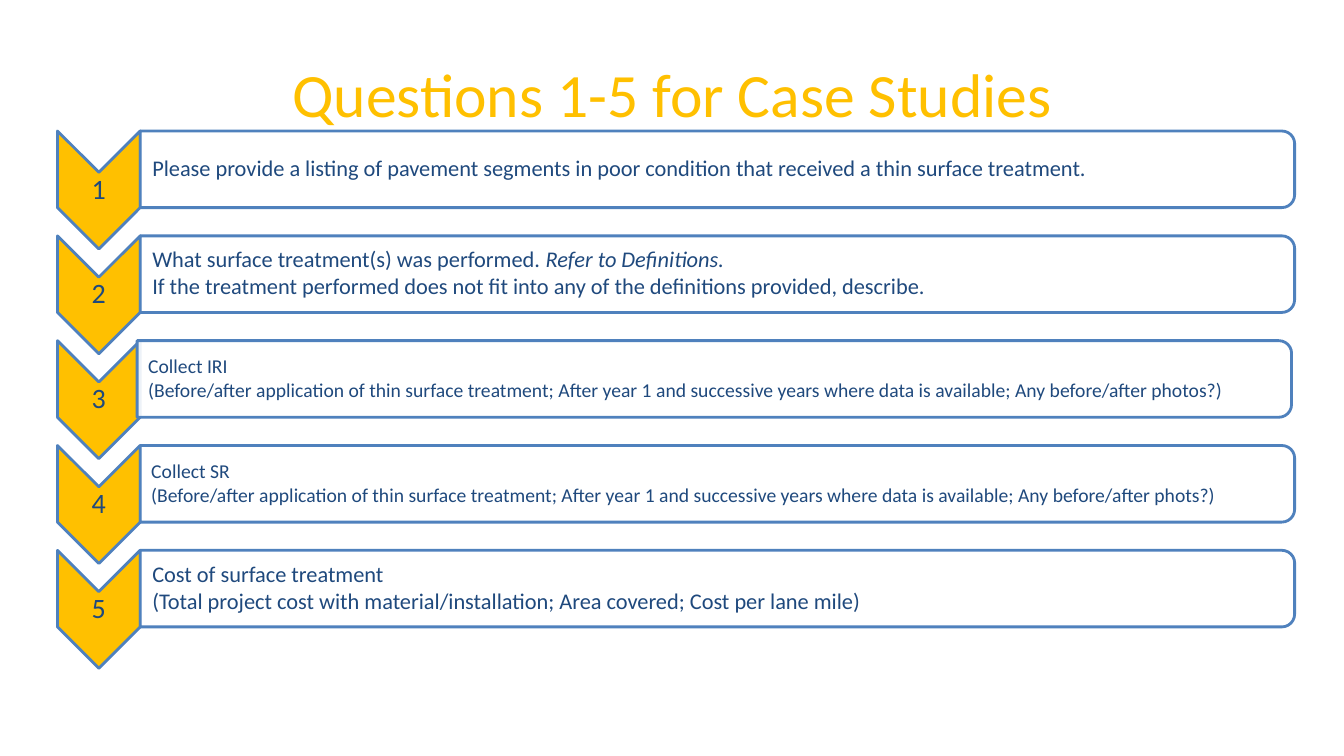
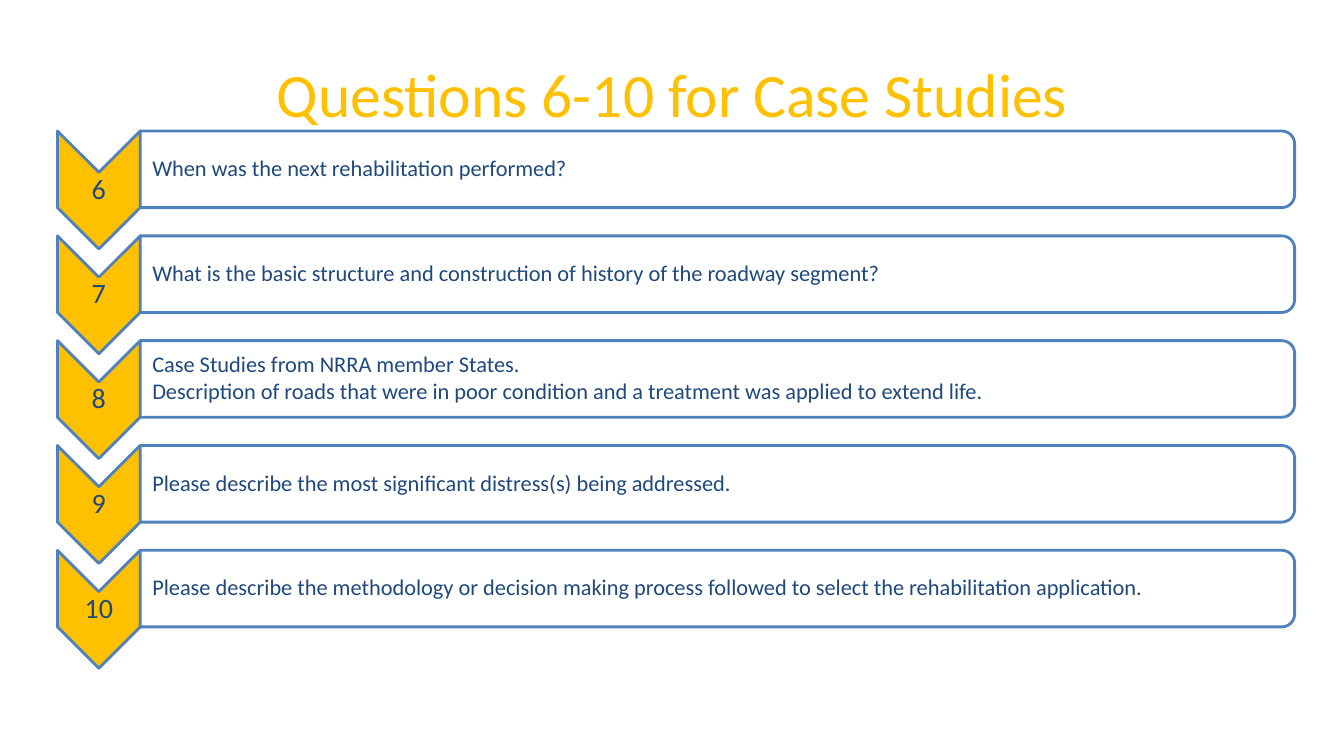
from dataclasses import dataclass

from pptx import Presentation
from pptx.dml.color import RGBColor
from pptx.enum.shapes import MSO_SHAPE
from pptx.enum.text import MSO_ANCHOR, MSO_AUTO_SIZE, PP_ALIGN
from pptx.oxml.ns import qn
from pptx.util import Inches, Pt
from lxml.etree import SubElement

# Shared look
FONT = "Calibri"
GOLD, BLUE, NAVY, WHITE = "FFC000", "4F81BD", "1F497D", "FFFFFF"
TITLE_ONLY = 5

# Row grid, in inches
FIRST_TOP, PITCH = 1.3, 1.04
CHEVRON_LEFT, CHEVRON_WIDTH, CHEVRON_HEIGHT = 0.57, 0.82, 1.17
PANEL_LEFT, PANEL_WIDTH, PANEL_HEIGHT = 1.39, 11.45, 0.76
TEXT_WIDTH, TEXT_HEIGHT = 11.41, 0.68
NUMBER_HEIGHT = 0.35
THIN_INSET = 0.01


@dataclass(frozen=True)
class Span:
    text: str
    italic: bool = False


@dataclass(frozen=True)
class Question:
    lines: tuple[tuple[Span, ...], ...]
    size: int = 16
    inset: float = 0.12
    hang: float = 0.19
    shift: float = 0


@dataclass(frozen=True)
class QuestionPage:
    title: str
    first_number: int
    questions: tuple[Question, ...]


def question(*lines: str) -> Question:
    return Question(tuple((Span(line),) for line in lines))


def compact_question(*lines: str, shift: float = 0) -> Question:
    return Question(question(*lines).lines, size=14, inset=0.11, hang=0.12, shift=shift)


PAGES = (
    QuestionPage("Questions 1-5 for Case Studies", 1, (
        question("Please provide a listing of pavement segments in poor condition "
                 "that received a thin surface treatment."),
        Question((
            (Span("What surface treatment(s) was performed. "),
             Span("Refer to Definitions.", italic=True)),
            (Span("If the treatment performed does not fit into any of the "
                  "definitions provided, describe."),),
        )),
        compact_question(
            "Collect IRI",
            "(Before/after application of thin surface treatment; After year 1 and "
            "successive years where data is available; Any before/after photos?)",
            shift=-0.03),
        compact_question(
            "Collect SR",
            "(Before/after application of thin surface treatment; After year 1 and "
            "successive years where data is available; Any before/after phots?)"),
        question("Cost of surface treatment",
                 "(Total project cost with material/installation; Area covered; "
                 "Cost per lane mile)"),
    )),
    QuestionPage("Questions 6-10 for Case Studies", 6, (
        question("When was the next rehabilitation performed?"),
        question("What is the basic structure and construction of history of the "
                 "roadway segment?"),
        question("Case Studies from NRRA member States.",
                 "Description of roads that were in poor condition and a treatment "
                 "was applied to extend life."),
        question("Please describe the most significant distress(s) being addressed."),
        question("Please describe the methodology or decision making process followed "
                 "to select the rehabilitation application."),
    )),
)


def color(value: str) -> RGBColor:
    return RGBColor.from_string(value)


def add_span(para, span: Span, size: int, ink: str) -> None:
    run = para.add_run()
    run.text = span.text
    run.font.name = FONT
    run.font.size = Pt(size)
    run.font.italic = span.italic
    run.font.color.rgb = color(ink)


def add_turned_shape(shapes, kind, left: float, top: float, width: float,
                     height: float, fill: str):
    """Add a shape turned by 90 degrees that covers the given area."""
    shape = shapes.add_shape(
        kind, Inches(left + (width - height) / 2), Inches(top + (height - width) / 2),
        Inches(height), Inches(width))
    shape.rotation = 90
    shape.shadow.inherit = False
    shape.fill.solid()
    shape.fill.fore_color.rgb = color(fill)
    shape.line.color.rgb = color(BLUE)
    shape.line.width = Pt(2)
    return shape


def set_opacity(shape, percent: int) -> None:
    fill_color = shape._element.spPr.find(qn("a:solidFill"))[0]
    SubElement(fill_color, qn("a:alpha")).set("val", str(percent * 1000))


def add_text_frame(shapes, left: float, middle: float, width: float, height: float,
                   left_inset: float = THIN_INSET):
    box = shapes.add_textbox(Inches(left), Inches(middle - height / 2),
                             Inches(width), Inches(height))
    frame = box.text_frame
    frame.word_wrap = True
    frame.vertical_anchor = MSO_ANCHOR.MIDDLE
    frame.margin_left = Inches(left_inset)
    frame.margin_top = frame.margin_right = frame.margin_bottom = Inches(THIN_INSET)
    return frame


def add_number(shapes, number: int, top: float) -> None:
    add_turned_shape(shapes, MSO_SHAPE.CHEVRON, CHEVRON_LEFT, top,
                     CHEVRON_WIDTH, CHEVRON_HEIGHT, GOLD)
    frame = add_text_frame(shapes, CHEVRON_LEFT, top + CHEVRON_HEIGHT / 2,
                           CHEVRON_WIDTH, NUMBER_HEIGHT)
    para = frame.paragraphs[0]
    para.alignment = PP_ALIGN.CENTER
    para.line_spacing = 0.9
    para.space_after = Pt(7)
    add_span(para, Span(str(number)), 20, NAVY)


def add_panel(shapes, item: Question, top: float) -> None:
    left = PANEL_LEFT + item.shift
    panel = add_turned_shape(shapes, MSO_SHAPE.ROUND_2_SAME_RECTANGLE, left, top,
                             PANEL_WIDTH, PANEL_HEIGHT, WHITE)
    set_opacity(panel, 90)
    frame = add_text_frame(shapes, left, top + PANEL_HEIGHT / 2,
                           TEXT_WIDTH, TEXT_HEIGHT, item.inset)
    for index, line in enumerate(item.lines):
        para = frame.add_paragraph() if index else frame.paragraphs[0]
        para.level = 1
        para.line_spacing = 0.9
        para.space_after = Pt(2)
        # Hanging indent
        properties = para._p.get_or_add_pPr()
        properties.set("marL", str(Inches(item.hang)))
        properties.set("indent", str(Inches(-item.hang)))
        for span in line:
            add_span(para, span, item.size, NAVY)


def add_title(page, text: str) -> None:
    title = page.shapes.title
    title.left, title.top = Inches(0.67), Inches(0.3)
    title.width, title.height = Inches(12), Inches(1.25)
    frame = title.text_frame
    frame.auto_size = MSO_AUTO_SIZE.NONE
    frame.vertical_anchor = MSO_ANCHOR.MIDDLE
    para = frame.paragraphs[0]
    para.alignment = PP_ALIGN.CENTER
    add_span(para, Span(text), 44, GOLD)


def add_question_page(deck, content: QuestionPage) -> None:
    page = deck.slides.add_slide(deck.slide_layouts[TITLE_ONLY])
    add_title(page, content.title)
    shapes = page.shapes.add_group_shape().shapes
    for row, item in enumerate(content.questions):
        top = FIRST_TOP + row * PITCH
        add_number(shapes, content.first_number + row, top)
        add_panel(shapes, item, top)


def main() -> None:
    deck = Presentation()
    deck.slide_width, deck.slide_height = Inches(13.33), Inches(7.5)
    for content in PAGES:
        add_question_page(deck, content)
    deck.save("out.pptx")


if __name__ == "__main__":
    main()
